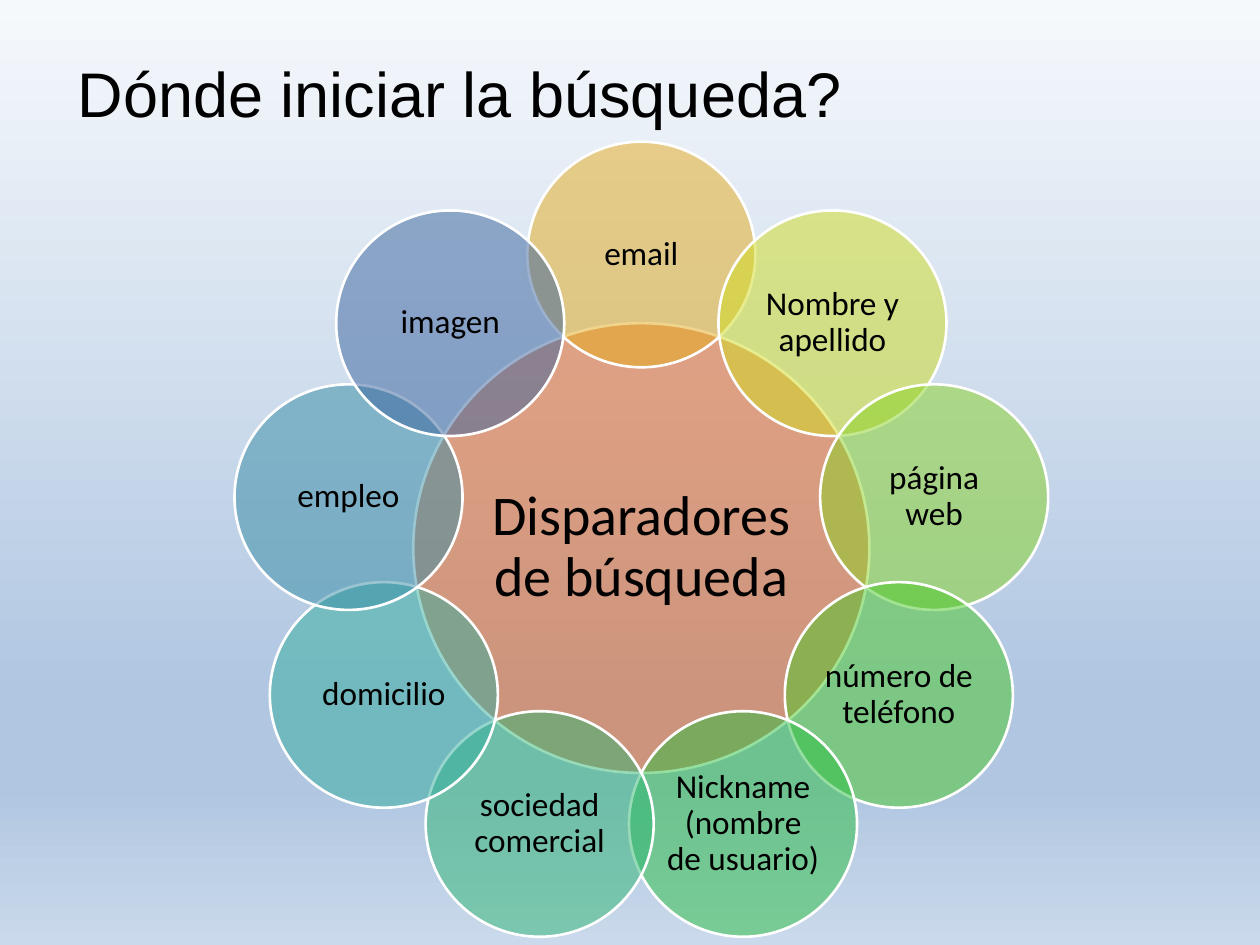
from dataclasses import dataclass
from math import cos, radians, sin

from lxml import etree
from pptx import Presentation
from pptx.dml.color import RGBColor
from pptx.enum.shapes import MSO_SHAPE
from pptx.enum.text import MSO_ANCHOR, PP_ALIGN
from pptx.oxml.ns import qn
from pptx.util import Inches, Pt

OVAL = MSO_SHAPE.OVAL
MIDDLE = MSO_ANCHOR.MIDDLE
CENTER = PP_ALIGN.CENTER
BLANK_LAYOUT = 6


@dataclass(frozen=True)
class Theme:
    """Colours, fonts and type sizes of the slide."""
    text: str = "000000"
    outline: str = "FFFFFF"
    hub: str = "EB641B"
    background: tuple = ((0, "F6F9FC"), (74, "B0C6E1"), (83, "B0C6E1"), (100, "CAD9EB"))
    title_font: str = "Arial"
    body_font: str = "Calibri"
    title_size: float = 36
    hub_size: float = 32
    petal_size: float = 19
    opacity: int = 50


THEME = Theme()
CENTER_X, CENTER_Y = 5.09, 4.35
RING_X, RING_Y = 2.36, 2.33
HUB_SIZE = (3.62, 3.57)
PETAL_SIZE = (1.81, 1.79)
PETALS = (
    ("email", "E5AB1B"),
    ("Nombre y apellido", "D0DD1F"),
    ("página web", "88D323"),
    ("número de teléfono", "4AC927"),
    ("Nickname (nombre de usuario)", "2BC041"),
    ("sociedad comercial", "2FB773"),
    ("domicilio", "33AE9D"),
    ("empleo", "368DA5"),
    ("imagen", "39639D"),
)


def add_color(parent, color):
    """Append an RGB colour element and return it."""
    return etree.SubElement(parent, qn("a:srgbClr"), val=color)


def paint_background(slide):
    """Fill the background with the vertical gradient of the theme."""
    fill = slide.background.fill
    fill.gradient()
    fill.gradient_angle = 270
    stops = next(slide.element.iter(qn("a:gsLst")))
    for stop in list(stops):
        stops.remove(stop)
    for position, color in THEME.background:
        stop = etree.SubElement(stops, qn("a:gs"), pos=str(position * 1000))
        add_color(stop, color)


def format_text(paragraph, font_name, size):
    """Give every run of a paragraph its font, size and colour."""
    for run in paragraph.runs:
        run.font.name = font_name
        run.font.size = Pt(size)
        run.font.color.rgb = RGBColor.from_string(THEME.text)


def add_title(slide, text):
    """Add the slide title."""
    shape = slide.shapes.add_textbox(Inches(0.52), Inches(0.38), Inches(9.48), Inches(0.71))
    shape.text_frame.word_wrap = True
    shape.text_frame.text = text
    format_text(shape.text_frame.paragraphs[0], THEME.title_font, THEME.title_size)


def add_circle(slide, center, size, text, color, font_size, inset):
    """Add a translucent labelled circle around a centre point."""
    (x, y), (width, height) = center, size
    shape = slide.shapes.add_shape(
        OVAL, Inches(x - width / 2), Inches(y - height / 2), Inches(width), Inches(height))
    shape.shadow.inherit = False
    shape.fill.solid()
    shape.fill.fore_color.rgb = RGBColor.from_string(color)
    fill_color = shape.element.spPr.find(qn("a:solidFill")).find(qn("a:srgbClr"))
    etree.SubElement(fill_color, qn("a:alpha"), val=str(THEME.opacity * 1000))
    shape.line.color.rgb = RGBColor.from_string(THEME.outline)
    shape.line.width = Pt(1.5)

    frame = shape.text_frame
    frame.word_wrap = True
    frame.vertical_anchor = MIDDLE
    frame.margin_left = frame.margin_right = Inches(inset)
    frame.margin_top = frame.margin_bottom = Inches(inset)
    frame.text = text
    paragraph = frame.paragraphs[0]
    paragraph.alignment = CENTER
    paragraph.line_spacing = 0.9
    paragraph.space_after = Pt(font_size * 0.35)
    format_text(paragraph, THEME.body_font, font_size)


def add_petals(slide):
    """Spread the petals evenly clockwise around the hub, from the top."""
    for index, (text, color) in enumerate(PETALS):
        angle = radians(index * 360 / len(PETALS))
        center = (CENTER_X + RING_X * sin(angle), CENTER_Y - RING_Y * cos(angle))
        add_circle(slide, center, PETAL_SIZE, text, color, THEME.petal_size, 0.03)


def main():
    """Build and save the slide."""
    presentation = Presentation()
    presentation.slide_width = Inches(10)
    presentation.slide_height = Inches(7.5)
    slide = presentation.slides.add_slide(presentation.slide_layouts[BLANK_LAYOUT])
    paint_background(slide)
    add_circle(slide, (CENTER_X, CENTER_Y), HUB_SIZE, "Disparadores de búsqueda",
               THEME.hub, THEME.hub_size, 0.04)
    add_petals(slide)
    add_title(slide, "Dónde iniciar la búsqueda?")
    presentation.save("out.pptx")


if __name__ == "__main__":
    main()
